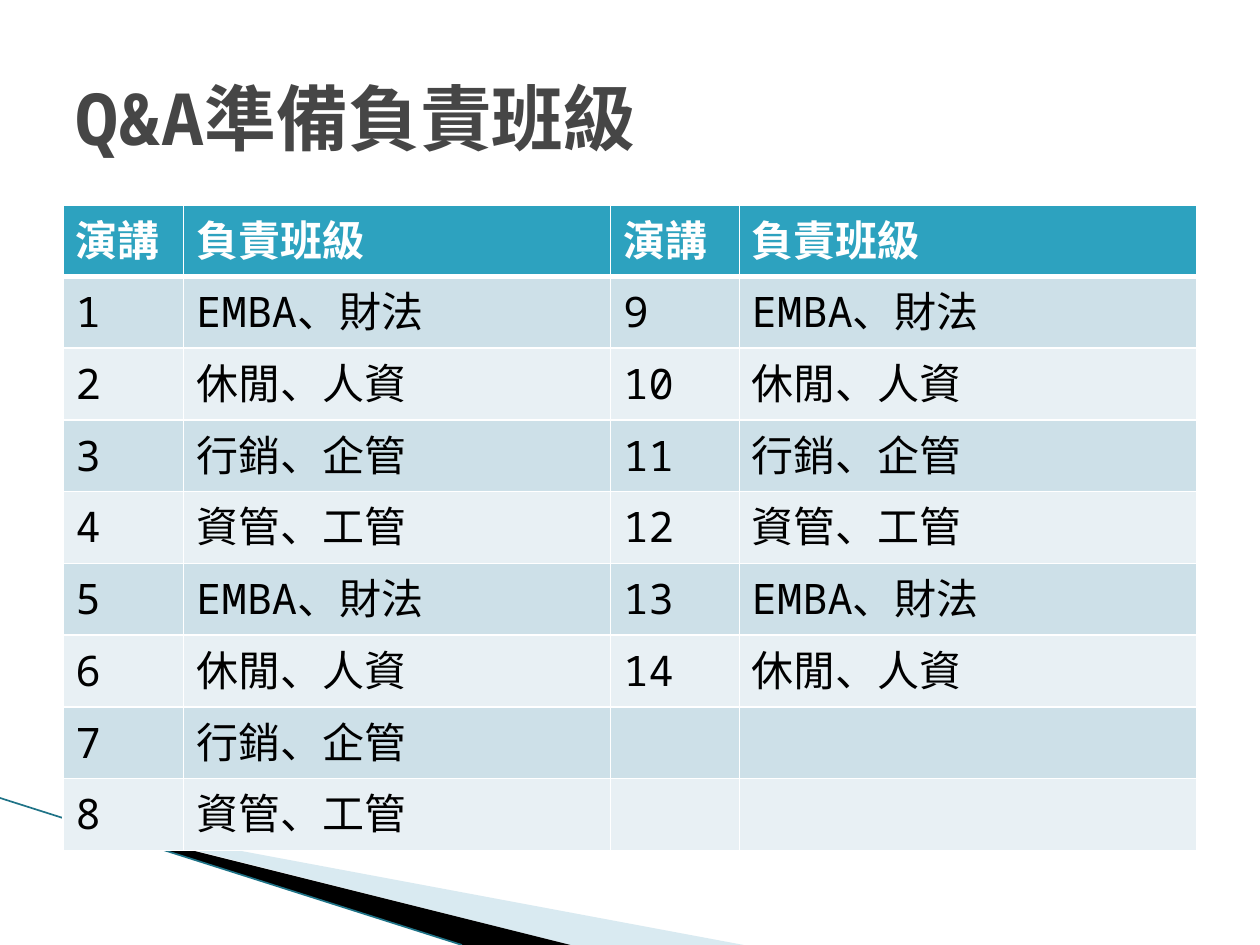
"""Build the slide that assigns classes to the Q&A of each talk."""
from dataclasses import dataclass

from lxml.etree import SubElement
from pptx import Presentation
from pptx.dml.color import RGBColor
from pptx.enum.shapes import MSO_CONNECTOR
from pptx.enum.text import MSO_ANCHOR, MSO_AUTO_SIZE, PP_ALIGN
from pptx.oxml import parse_xml
from pptx.oxml.ns import nsdecls, qn
from pptx.util import Pt


@dataclass(frozen=True)
class Theme:
    font: str = "Noto Sans Mono"
    title_size: int = 41
    cell_size: int = 24
    title: str = "464646"
    text: str = "000000"
    white: str = "FFFFFF"
    header: str = "2DA2BF"
    bands: tuple = ("CDE0E8", "E8F0F4")
    wedge: str = "A0CBDC"
    band: str = "000000"
    edge: str = "1F7387"


class SlideBuilder:
    def __init__(self, page, theme):
        self.page = page
        self.theme = theme

    def apply(self, target, values):
        for name, value in values.items():
            setattr(target, name, value)

    def add_text(self, para, text, size, color, bold=False):
        span = para.add_run()
        span.text = text
        self.apply(span.font, {"name": self.theme.font, "size": Pt(size), "bold": bold})
        span.font.color.rgb = RGBColor.from_string(color)
        SubElement(span.font._element, qn("a:ea"), typeface=self.theme.font)

    def title(self, text, left, top, width, height):
        box = self.page.shapes.title
        self.apply(box, {"left": Pt(left), "top": Pt(top), "width": Pt(width), "height": Pt(height)})
        self.apply(box.text_frame, {"word_wrap": True, "auto_size": MSO_AUTO_SIZE.NONE,
                                    "vertical_anchor": MSO_ANCHOR.MIDDLE})
        para = box.text_frame.paragraphs[0]
        para.alignment = PP_ALIGN.LEFT
        self.add_text(para, text, self.theme.title_size, self.theme.title, True)

    def polygon(self, points, color, opacity=100):
        outline = self.page.shapes.build_freeform(*points[0], scale=Pt(1))
        outline.add_line_segments(points[1:], close=True)
        shape = outline.convert_to_shape()
        shape.shadow.inherit = False
        shape.fill.solid()
        shape.fill.fore_color.rgb = RGBColor.from_string(color)
        shape.line.fill.background()
        if opacity < 100:
            tint = shape._element.spPr.find(f"{qn('a:solidFill')}/{qn('a:srgbClr')}")
            SubElement(tint, qn("a:alpha"), val=str(opacity * 1000))

    def line(self, start, end, color, width):
        ends = [Pt(value) for value in (*start, *end)]
        connector = self.page.shapes.add_connector(MSO_CONNECTOR.STRAIGHT, *ends)
        connector.line.width = Pt(width)
        connector.line.color.rgb = RGBColor.from_string(color)
        SubElement(connector._element.spPr, qn("a:effectLst"))

    def borders(self, cell, widths):
        properties = cell._tc.get_or_add_tcPr()
        for index, (side, width) in enumerate(widths.items()):
            properties.insert(index, parse_xml(
                f'<a:ln{side} {nsdecls("a")} w="{Pt(width)}"><a:solidFill>'
                f'<a:srgbClr val="{self.theme.white}"/></a:solidFill></a:ln{side}>'))

    def table(self, rows, left, top, widths, row_height):
        frame = self.page.shapes.add_table(len(rows), len(widths), Pt(left), Pt(top),
                                           Pt(sum(widths)), Pt(row_height * len(rows)))
        grid = frame.table
        for column, width in zip(grid.columns, widths):
            column.width = Pt(width)
        for number, row in enumerate(rows):
            grid.rows[number].height = Pt(row_height)
            header = number == 0
            fill = self.theme.header if header else self.theme.bands[(number - 1) % 2]
            color = self.theme.white if header else self.theme.text
            edges = {"L": 1, "R": 1, "T": 3 if number == 1 else 1, "B": 3 if header else 1}
            for cell, text in zip(grid.rows[number].cells, row):
                cell.fill.solid()
                cell.fill.fore_color.rgb = RGBColor.from_string(fill)
                self.borders(cell, edges)
                if text:
                    self.add_text(cell.text_frame.paragraphs[0], text, self.theme.cell_size, color, header)


def schedule(classes, talks, row_count):
    entries = [(str(talk + 1), classes[talk % row_count % len(classes)]) for talk in range(talks)]
    entries += [("", "")] * (2 * row_count - talks)
    halves = zip(entries[:row_count], entries[row_count:])
    return [("演講", "負責班級") * 2] + [first + second for first, second in halves]


def main():
    deck = Presentation()
    deck.slide_width, deck.slide_height = Pt(720), Pt(540)
    theme = Theme()
    builder = SlideBuilder(deck.slides.add_slide(deck.slide_layouts[5]), theme)
    builder.polygon([(39.6, 468.5), (425, 540), (326, 540)], theme.wedge, 40)
    builder.polygon([(38.2, 467.5), (326, 540), (264, 540)], theme.band)
    builder.line((0, 456), (264, 540), theme.edge, 0.95)
    classes = ["EMBA、財法", "休閒、人資", "行銷、企管", "資管、工管"]
    builder.table(schedule(classes, 14, 8), 36, 117, [69, 244, 73.5, 261.5], 41)
    builder.title("Q&A準備負責班級", 36, 21.6, 648, 90)
    deck.save("out.pptx")


if __name__ == "__main__":
    main()
